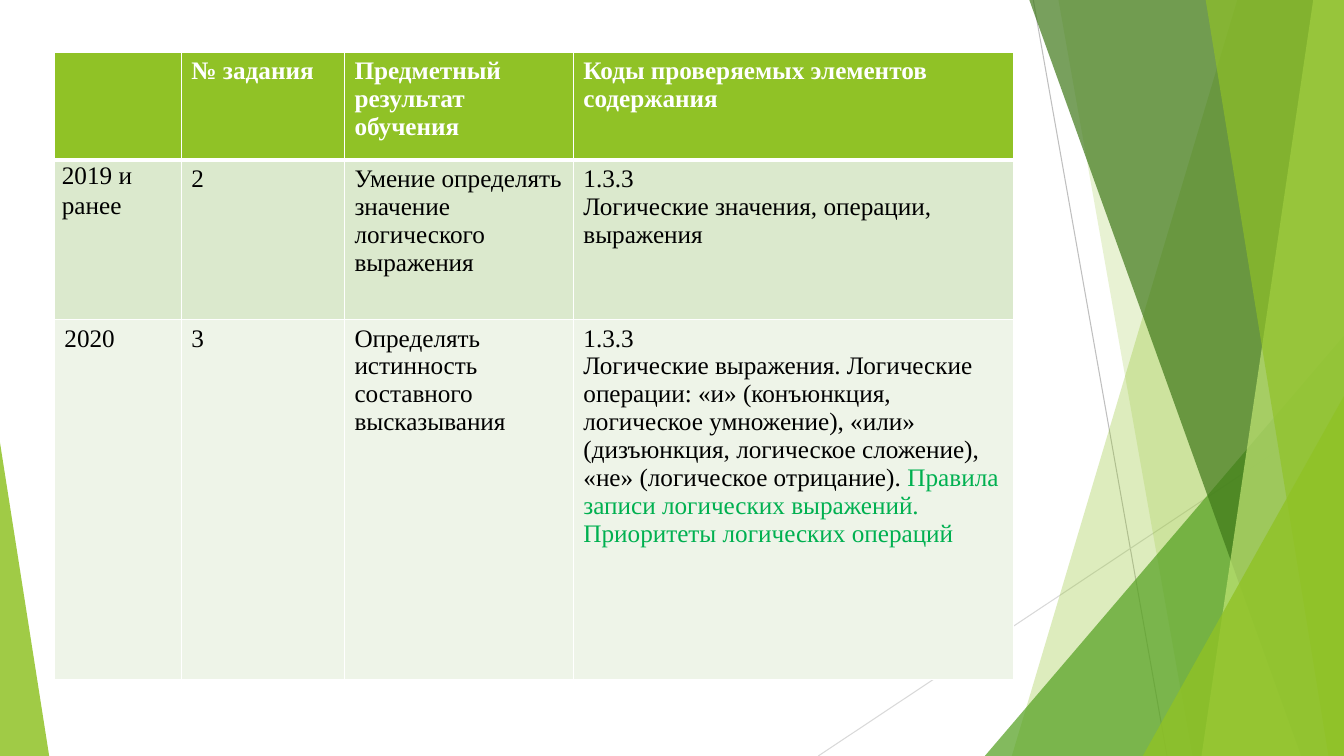
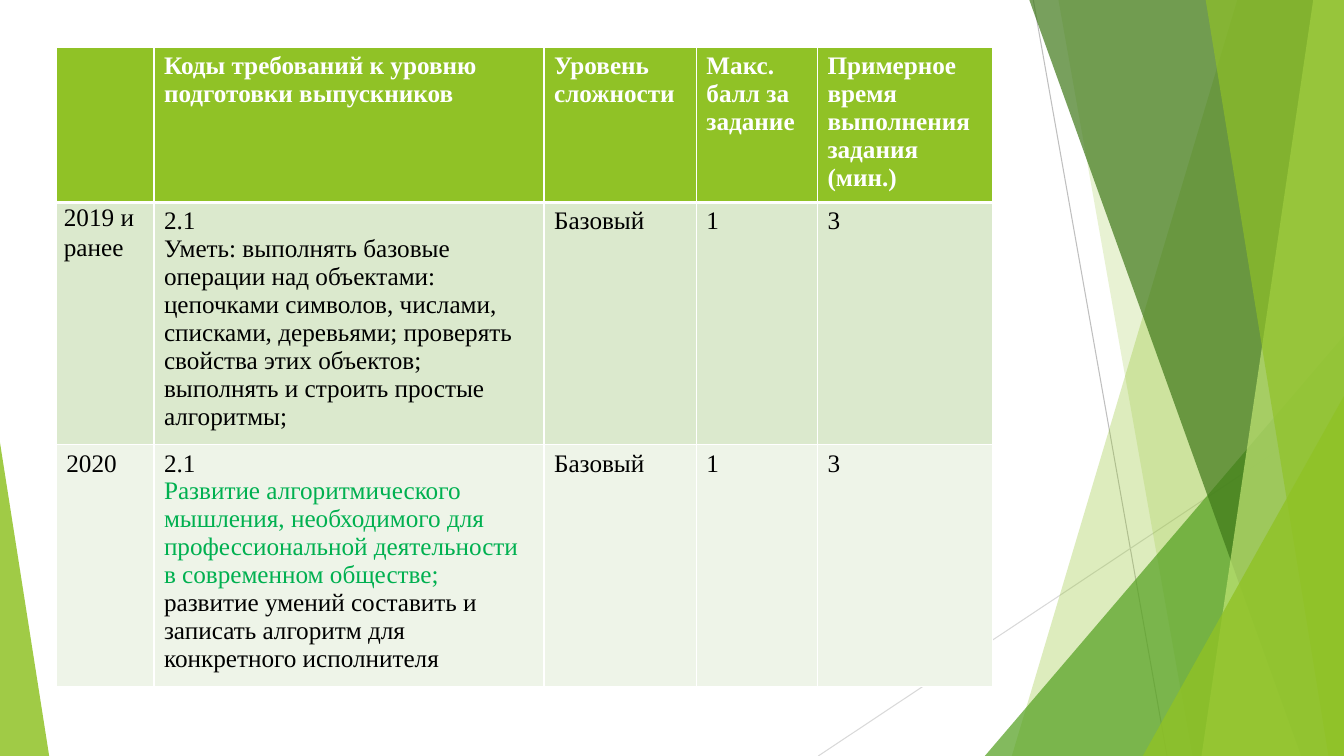
from lxml import etree
from pptx import Presentation, util as u
from pptx.dml.color import RGBColor
from pptx.enum import shapes as kinds
from pptx.oxml.ns import qn

WHITE = RGBColor(0xFF, 0xFF, 0xFF)
BLACK = RGBColor(0x00, 0x00, 0x00)
LIME = RGBColor(0x90, 0xC2, 0x26)
GREEN = RGBColor(0x54, 0xA0, 0x21)
DARK_GREEN = RGBColor(0x3F, 0x78, 0x19)
PALE_LIME = RGBColor(0xC0, 0xE4, 0x74)
ACCENT_TEXT = RGBColor(0x00, 0xB0, 0x50)
GREY = RGBColor(0xBF, 0xBF, 0xBF)
LIGHT_GREY = RGBColor(0xD9, 0xD9, 0xD9)
ROW_FILLS = [LIME, RGBColor(0xDB, 0xE9, 0xCD), RGBColor(0xEE, 0xF4, 0xE8)]

FONT, FONT_SIZE = "Times New Roman", u.Pt(18)
WIDTH, HEIGHT = 33.87, 19.05
BLEED = -0.03  # the bands start just above the slide

# Decoration, back to front; lengths in cm
LINES = [  # x1, y1, x2, y2, colour
    (26.04, 0, 29.41, HEIGHT, GREY),
    (WIDTH, 10.24, 20.62, HEIGHT, LIGHT_GREY),
]
FACETS = [  # kind, geometry, colour, opacity in percent
    ("band", (31.19, 25.5), LIME, 30),  # left edge at top and at bottom
    ("band", (26.67, 30.05), LIME, 20),
    ("triangle", (24.82, 8.46, 9.05, 1), GREEN, 72),  # left, top, width, apex
    ("band", (25.93, 32.79), DARK_GREEN, 70),
    ("band", (33.1, 30.28), PALE_LIME, 70),
    ("band", (30.38, 33.48), LIME, 65),
    ("triangle", (28.8, 9.98, 5.07, 1), LIME, 80),
    ("triangle", (0, 11.15, 1.24, 0), LIME, 85),
]

# Each cell is a list of paragraphs, each paragraph a list of (text, accented)
OLD, NEW = [[("2019 и ранее", False)]], [[("2020", False)]]


def plain(*paragraphs):
    return [[(words, False)] for words in paragraphs]


TABLES = [
    {
        "at": (1.37, 1.32),
        "columns": [3.2, 4.11, 5.77, 11.1],
        "heights": [2.72, 4.01, 9.07],
        "rows": [
            [[], plain("№ задания"), plain("Предметный результат обучения"),
             plain("Коды проверяемых элементов содержания")],
            [OLD, plain("2"),
             plain("Умение определять значение логического выражения"),
             plain("1.3.3", "Логические значения, операции, выражения")],
            [NEW, plain("3"),
             plain("Определять истинность", "составного высказывания"),
             plain("1.3.3", "Логические выражения. Логические операции: «и» "
                   "(конъюнкция, логическое умножение), «или»")
             + [[("(дизъюнкция, логическое сложение), «не» "
                  "(логическое отрицание). ", False),
                 ("Правила записи логических выражений. "
                  "Приоритеты логических операций", True)]]],
        ],
    },
    {
        "at": (1.42, 1.19),
        "columns": [2.46, 9.83, 3.84, 3.05, 4.42],
        "heights": [3.91, 6.1, 6.1],
        "rows": [
            [[], plain("Коды требований к уровню подготовки выпускников"),
             plain("Уровень сложности"), plain("Макс. балл за задание"),
             plain("Примерное время выполнения задания (мин.)")],
            [OLD,
             plain("2.1", "Уметь: выполнять базовые операции над объектами: "
                   "цепочками символов, числами, списками, деревьями; "
                   "проверять свойства этих объектов; выполнять и строить "
                   "простые алгоритмы;"),
             plain("Базовый"), plain("1"), plain("3")],
            [NEW,
             plain("2.1")
             + [[("Развитие алгоритмического мышления, необходимого для "
                  "профессиональной деятельности в современном обществе; ", True),
                 ("развитие умений составить и записать алгоритм для "
                  "конкретного исполнителя", False)]],
             plain("Базовый"), plain("1"), plain("3")],
        ],
    },
]


def add_line(slide, x1, y1, x2, y2, colour):
    line = slide.shapes.add_connector(
        kinds.MSO_CONNECTOR.STRAIGHT, *map(u.Cm, (x1, y1, x2, y2)))
    line.line.color.rgb = colour
    line.line.width = u.Pt(0.75)
    etree.SubElement(line.element.spPr, qn("a:effectLst"))


def add_band(slide, top_left, bottom_left):
    corners = [(WIDTH, BLEED), (WIDTH, HEIGHT), (bottom_left, HEIGHT)]
    builder = slide.shapes.build_freeform(u.Cm(top_left), u.Cm(BLEED))
    builder.add_line_segments([(u.Cm(x), u.Cm(y)) for x, y in corners])
    return builder.convert_to_shape()


def add_triangle(slide, left, top, width, apex):
    shape = slide.shapes.add_shape(
        kinds.MSO_SHAPE.ISOSCELES_TRIANGLE,
        *map(u.Cm, (left, top, width, HEIGHT - top)))
    shape.adjustments[0] = apex
    return shape


def add_decoration(slide):
    for line in LINES:
        add_line(slide, *line)
    for kind, geometry, colour, opacity in FACETS:
        add = add_band if kind == "band" else add_triangle
        shape = add(slide, *geometry)
        shape.shadow.inherit = False
        shape.line.fill.background()
        shape.fill.solid()
        shape.fill.fore_color.rgb = colour
        colour_node = shape.element.spPr.find(qn("a:solidFill"))[0]
        etree.SubElement(colour_node, qn("a:alpha"), val=str(opacity * 1000))


def set_borders(cell, widths):
    properties = cell._tc.get_or_add_tcPr()
    for side, points in widths.items():
        border = etree.SubElement(properties, qn(f"a:ln{side}"), w=str(u.Pt(points)))
        fill = etree.SubElement(border, qn("a:solidFill"))
        etree.SubElement(fill, qn("a:srgbClr"), val=str(WHITE))


def fill_cell(cell, paragraphs, row):
    header = row == 0
    set_borders(cell, {"L": 1, "R": 1, "T": 3 if row == 1 else 1,
                       "B": 3 if header else 1})
    cell.fill.solid()
    cell.fill.fore_color.rgb = ROW_FILLS[row]
    frame = cell.text_frame
    for index, runs in enumerate(paragraphs):
        paragraph = frame.add_paragraph() if index else frame.paragraphs[0]
        for words, accented in runs:
            run = paragraph.add_run()
            run.text = words
            run.font.name, run.font.size = FONT, FONT_SIZE
            run.font.bold = header
            run.font.color.rgb = (
                WHITE if header else ACCENT_TEXT if accented else BLACK)


def add_grid(slide, content):
    columns, heights = content["columns"], content["heights"]
    table = slide.shapes.add_table(
        len(heights), len(columns), *map(u.Cm, content["at"]),
        u.Cm(sum(columns)), u.Cm(sum(heights))).table
    table.horz_banding = False
    for column, width in zip(table.columns, columns):
        column.width = u.Cm(width)
    for index, (height, cells) in enumerate(zip(heights, content["rows"])):
        table.rows[index].height = u.Cm(height)
        for position, paragraphs in enumerate(cells):
            fill_cell(table.cell(index, position), paragraphs, index)
    # The first year label sits tight in its cell
    label = table.cell(1, 0)
    label.margin_left = label.margin_right = u.Cm(0.19)
    label.margin_top = label.margin_bottom = 0
    label.text_frame.paragraphs[0].line_spacing = 1.07


def main():
    presentation = Presentation()
    presentation.slide_width = u.Cm(WIDTH)
    presentation.slide_height = u.Cm(HEIGHT)
    for content in TABLES:
        slide = presentation.slides.add_slide(presentation.slide_layouts[6])
        add_decoration(slide)
        add_grid(slide, content)
    presentation.save("out.pptx")


if __name__ == "__main__":
    main()
